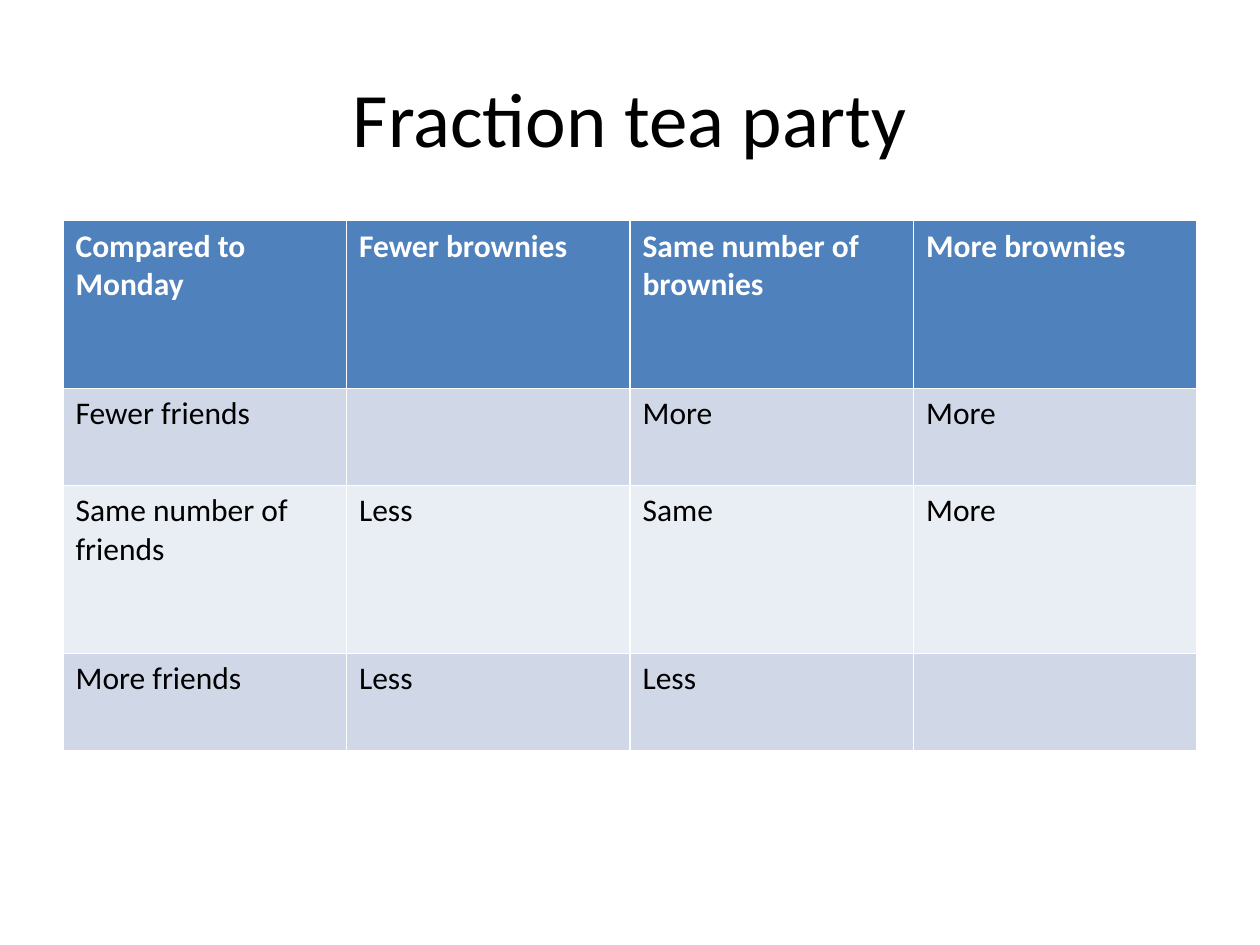
from pptx import Presentation
from pptx.dml.color import RGBColor
from pptx.enum.text import MSO_ANCHOR, PP_ALIGN
from pptx.util import Cm, Pt

TITLE = "Fraction tea party"
COMPARISONS = [
    ("Compared to Monday", "Fewer brownies", "Same number of brownies", "More brownies"),
    ("Fewer friends", "", "More", "More"),
    ("Same number of friends", "Less", "Same", "More"),
    ("More friends", "Less", "Less", ""),
]
ROW_HEIGHTS = [3.38, 1.96, 3.38, 1.96]
ROW_FILLS = ["4F81BD", "D0D8E8", "E9EDF4", "D0D8E8"]
LEFT, WIDTH = 1.27, 22.86


def color(value):
    return RGBColor.from_string(value)


def format_runs(paragraph, size, text_color, bold=False):
    for run in paragraph.runs:
        run.font.name = "Calibri"
        run.font.size = Pt(size)
        run.font.bold = bold
        run.font.color.rgb = color(text_color)


def add_title(slide):
    title = slide.shapes.add_textbox(Cm(LEFT), Cm(0.76), Cm(WIDTH), Cm(3.18)).text_frame
    title.word_wrap = True
    title.vertical_anchor = MSO_ANCHOR.MIDDLE
    title.text = TITLE
    title.paragraphs[0].alignment = PP_ALIGN.CENTER
    format_runs(title.paragraphs[0], 44, "000000")


def add_comparisons(slide):
    columns = len(COMPARISONS[0])
    table = slide.shapes.add_table(
        len(COMPARISONS), columns, Cm(LEFT), Cm(4.45), Cm(WIDTH), Cm(sum(ROW_HEIGHTS))
    ).table
    for column in table.columns:
        column.width = Cm(WIDTH / columns)
    for r, (answers, height, fill) in enumerate(zip(COMPARISONS, ROW_HEIGHTS, ROW_FILLS)):
        table.rows[r].height = Cm(height)
        header = r == 0
        for c, answer in enumerate(answers):
            cell = table.cell(r, c)
            cell.fill.solid()
            cell.fill.fore_color.rgb = color(fill)
            cell.text_frame.text = answer
            format_runs(cell.text_frame.paragraphs[0], 18, "FFFFFF" if header else "000000", header)


def main():
    deck = Presentation()
    deck.slide_width, deck.slide_height = Cm(25.4), Cm(19.05)
    slide = deck.slides.add_slide(deck.slide_layouts[6])
    add_title(slide)
    add_comparisons(slide)
    deck.save("out.pptx")


if __name__ == "__main__":
    main()
